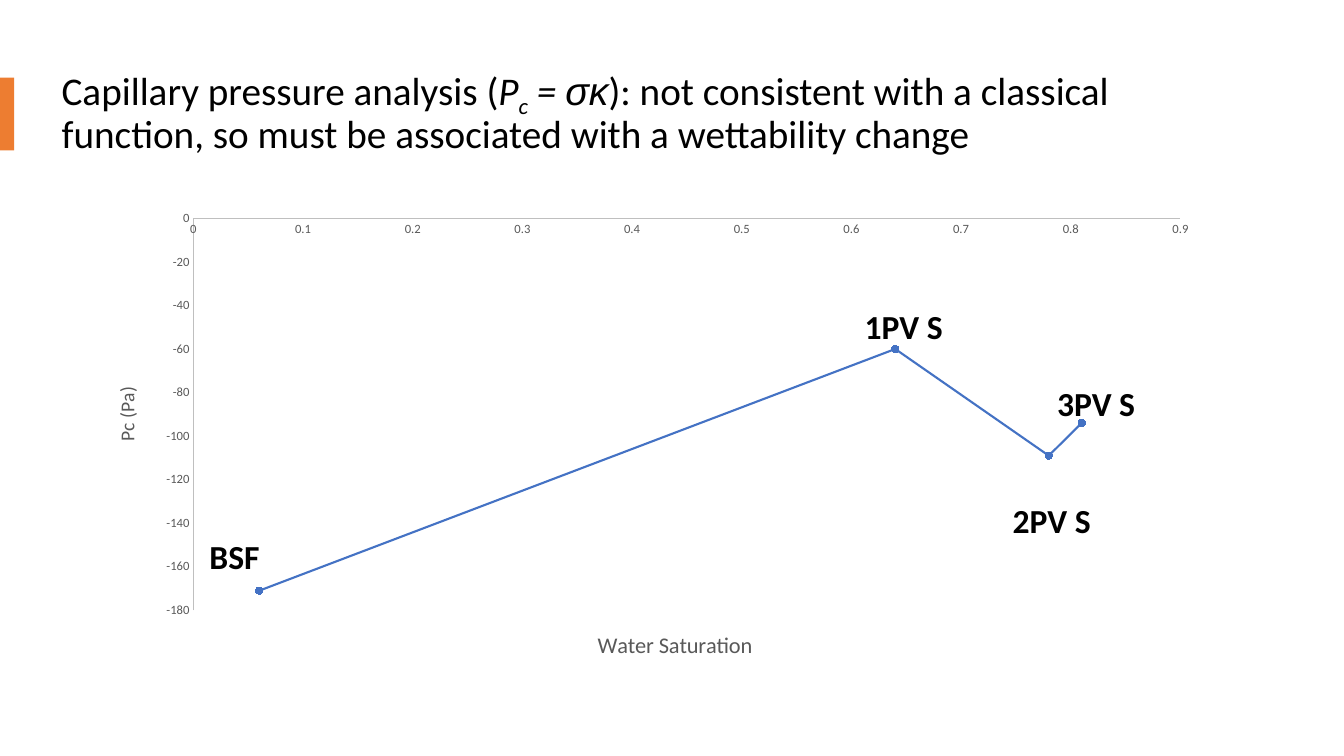
from lxml import etree
from pptx import Presentation
from pptx.chart.data import XyChartData
from pptx.dml.color import RGBColor
from pptx.enum.chart import XL_CHART_TYPE, XL_MARKER_STYLE, XL_TICK_MARK
from pptx.enum.shapes import MSO_SHAPE
from pptx.enum.text import MSO_ANCHOR, MSO_AUTO_SIZE, PP_ALIGN
from pptx.oxml.ns import qn
from pptx.util import Cm, Pt

SCATTER = XL_CHART_TYPE.XY_SCATTER_LINES
CIRCLE = XL_MARKER_STYLE.CIRCLE
NO_TICK = XL_TICK_MARK.NONE
RECT = MSO_SHAPE.RECTANGLE
MIDDLE = MSO_ANCHOR.MIDDLE
LEFT = PP_ALIGN.LEFT
NO_FIT = MSO_AUTO_SIZE.NONE
FIT = MSO_AUTO_SIZE.SHAPE_TO_FIT_TEXT

COLORS = {"text": "000000", "accent": "ED7D31", "curve": "4472C4",
          "axis": "BFBFBF", "muted": "595959"}
FONT = "Calibri"

# Text, font, italic, baseline shift
TITLE = [
    ("Capillary pressure analysis (", FONT, False, 0),
    ("P", FONT, True, 0),
    ("c", FONT, True, -25000),
    (" = ", FONT, True, 0),
    ("σκ", "Arial", True, 0),
    ("): not consistent with a classical function, so must be "
     "associated with a wettability change", FONT, False, 0),
]
POINTS = [(0.06, -171), (0.64, -60), (0.78, -109), (0.81, -94)]
# Text, then left, top and width in cm within the chart box
LABELS = [("BSF", 2.69, 8.31, 1.8), ("1PV S", 19.2, 2.51, 2.74),
          ("2PV S", 22.93, 7.39, 2.74), ("3PV S", 24.05, 4.45, 2.74)]


def rgb(name):
    return RGBColor.from_string(COLORS[name])


def style(font, size, color, bold=False, name=FONT):
    font.name = name
    font.size = Pt(size)
    font.bold = bold
    font.color.rgb = rgb(color)


def set_layout(parent, index, **parts):
    """Give a chart part a manual layout, as fractions of the chart."""
    layout = parent.find(qn("c:layout"))
    if layout is None:
        layout = etree.Element(qn("c:layout"))
        parent.insert(index, layout)
    manual = etree.SubElement(layout, qn("c:manualLayout"))
    for tag, value in parts.items():
        etree.SubElement(manual, qn("c:" + tag)).set("val", str(value))


def add_title(slide, left, top, width, height):
    title = slide.shapes.title
    title.left, title.top = Cm(left), Cm(top)
    title.width, title.height = Cm(width), Cm(height)
    frame = title.text_frame
    frame.word_wrap = True
    frame.auto_size = NO_FIT
    frame.vertical_anchor = MIDDLE
    para = frame.paragraphs[0]
    para.alignment = LEFT
    para.line_spacing = 0.9
    for text, name, italic, shift in TITLE:
        run = para.add_run()
        run.text = text
        style(run.font, 28, "text", name=name)
        run.font.italic = italic
        if shift:
            run.font._element.set("baseline", str(shift))


def add_bar(slide, left, top, width, height):
    bar = slide.shapes.add_shape(RECT, Cm(left), Cm(top), Cm(width), Cm(height))
    bar.shadow.inherit = False
    bar.fill.solid()
    bar.fill.fore_color.rgb = rgb("accent")
    bar.line.fill.background()


def format_axis(axis, low, high, step, title, size, x, y):
    axis.minimum_scale, axis.maximum_scale = low, high
    axis.major_unit = step
    axis.has_major_gridlines = False
    axis.major_tick_mark = axis.minor_tick_mark = NO_TICK
    axis.tick_labels.number_format = "General"
    axis.tick_labels.number_format_is_linked = False
    style(axis.tick_labels.font, 9, "muted")
    axis.format.line.color.rgb = rgb("axis")
    axis.format.line.width = Pt(0.75)
    para = axis.axis_title.text_frame.paragraphs[0]
    para.text = title
    style(para.runs[0].font, size, "muted")
    set_layout(axis.axis_title._element, 1, xMode="edge", yMode="edge", x=x, y=y)


def add_curve(slide, left, top, width, height):
    data = XyChartData()
    series = data.add_series("Series 1")
    for sat, press in POINTS:
        series.add_data_point(sat, press)
    chart = slide.shapes.add_chart(
        SCATTER, Cm(left), Cm(top), Cm(width), Cm(height), data).chart
    style(chart.font, 10, "text")
    chart.has_title = False
    chart.has_legend = False
    plot = chart.plots[0]
    plot.vary_by_categories = False
    set_layout(chart._chartSpace.chart.plotArea, 0, layoutTarget="inner",
               xMode="edge", yMode="edge", x=0.09, y=0.035, w=0.883, h=0.817)
    format_axis(chart.category_axis, 0, 0.9, 0.1, "Water Saturation", 16,
                0.448, 0.885)
    format_axis(chart.value_axis, -180, 0, 20, "Pc (Pa)", 14, 0.015, 0.378)

    curve = plot.series[0]
    curve.smooth = False
    curve.format.line.color.rgb = rgb("curve")
    curve.format.line.width = Pt(1.5)
    marker = curve.marker
    marker.style = CIRCLE
    marker.size = 5
    marker.format.fill.solid()
    marker.format.fill.fore_color.rgb = rgb("curve")
    marker.format.line.color.rgb = rgb("curve")

    for text, x, y, wide in LABELS:
        box = slide.shapes.add_textbox(
            Cm(left + x), Cm(top + y), Cm(wide), Cm(1.24))
        frame = box.text_frame
        frame.word_wrap = False
        frame.auto_size = FIT
        frame.text = text
        style(frame.paragraphs[0].runs[0].font, 24, "text", bold=True)


def main():
    deck = Presentation()
    deck.slide_width, deck.slide_height = Cm(33.87), Cm(19.05)
    slide = deck.slides.add_slide(deck.slide_layouts[5])
    add_title(slide, 1.3, 1.45, 29.21, 2.74)
    add_bar(slide, 0, 1.96, 0.36, 1.83)
    add_curve(slide, 2.34, 5.08, 28.17, 12.09)
    deck.save("out.pptx")


if __name__ == "__main__":
    main()
